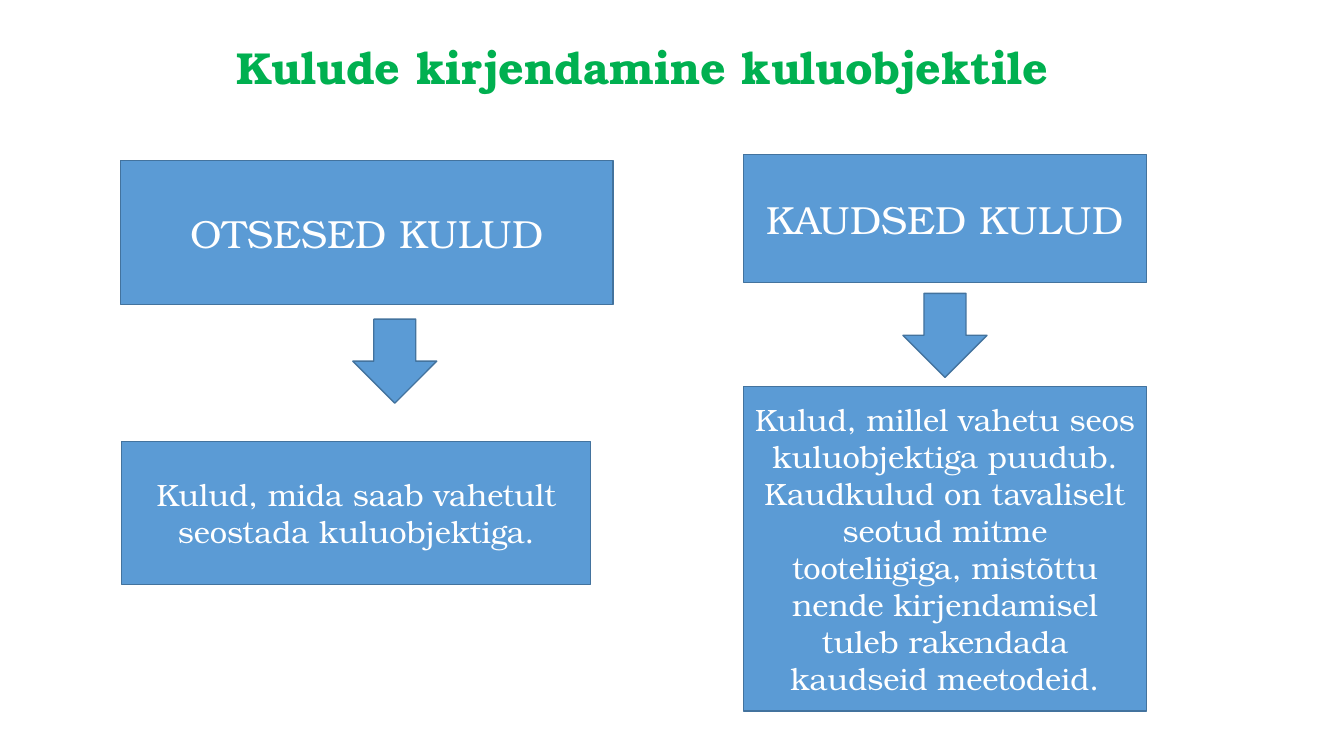
import pptx
import pptx.util
import pptx.dml.color
import pptx.enum.shapes
import pptx.enum.text

Pt = pptx.util.Pt
KIND = pptx.enum.shapes.MSO_SHAPE
ALIGN = pptx.enum.text.PP_ALIGN
MIDDLE = pptx.enum.text.MSO_ANCHOR.MIDDLE
HUES = {"title": "00B050", "fill": "5B9BD5", "edge": "43739E", "text": "FFFFFF"}


class Board:
    """Hold the style and the current slide, and draw its elements."""

    def __init__(self, deck, font):
        self.slide = deck.slides.add_slide(deck.slide_layouts[5])
        self.font = font

    def hue(self, name):
        return pptx.dml.color.RGBColor.from_string(HUES[name])

    def label(self, frame, text, size, hue, align, bold=False):
        frame.text = text
        frame.word_wrap = True
        frame.vertical_anchor = MIDDLE
        for para in frame.paragraphs:
            para.alignment = align
            for run in para.runs:
                run.font.name = self.font
                run.font.size = Pt(size)
                run.font.bold = bold
                run.font.color.rgb = self.hue(hue)

    def title(self, text, left, top, width, height):
        head = self.slide.shapes.title
        head.left, head.top = Pt(left), Pt(top)
        head.width, head.height = Pt(width), Pt(height)
        self.label(head.text_frame, text, 32, "title", ALIGN.LEFT, True)
        head.text_frame.auto_size = pptx.enum.text.MSO_AUTO_SIZE.NONE
        head.text_frame.paragraphs[0].line_spacing = 0.9

    def shape(self, kind, left, top, width, height):
        item = self.slide.shapes.add_shape(
            kind, Pt(left), Pt(top), Pt(width), Pt(height))
        item.shadow.inherit = False
        item.fill.solid()
        item.fill.fore_color.rgb = self.hue("fill")
        item.line.color.rgb = self.hue("edge")
        item.line.width = Pt(1)
        return item

    def box(self, text, size, *area):
        item = self.shape(KIND.RECTANGLE, *area)
        self.label(item.text_frame, text, size, "text", ALIGN.CENTER)

    def arrow(self, left, top):
        self.shape(KIND.DOWN_ARROW, left, top, 60, 60)


def main():
    deck = pptx.Presentation()
    deck.slide_width, deck.slide_height = Pt(960), Pt(540)
    board = Board(deck, "TeX Gyre Bonum")
    board.title("Kulude kirjendamine kuluobjektile", 162, 5, 648, 90)
    board.box("OTSESED KULUD", 28, 86, 114.5, 352, 103)
    board.box("KAUDSED KULUD", 28, 531, 110.5, 288, 91.5)
    board.arrow(252, 228)
    board.arrow(645, 209.5)
    board.box("Kulud, mida saab vahetult seostada kuluobjektiga.",
              22, 87, 315.5, 335, 102)
    board.box("Kulud, millel vahetu seos kuluobjektiga puudub.\n"
              "Kaudkulud on tavaliselt seotud mitme tooteliigiga, mistõttu "
              "nende kirjendamisel tuleb rakendada kaudseid meetodeid.",
              22, 531, 276, 288, 232)
    deck.save("out.pptx")


if __name__ == "__main__":
    main()
